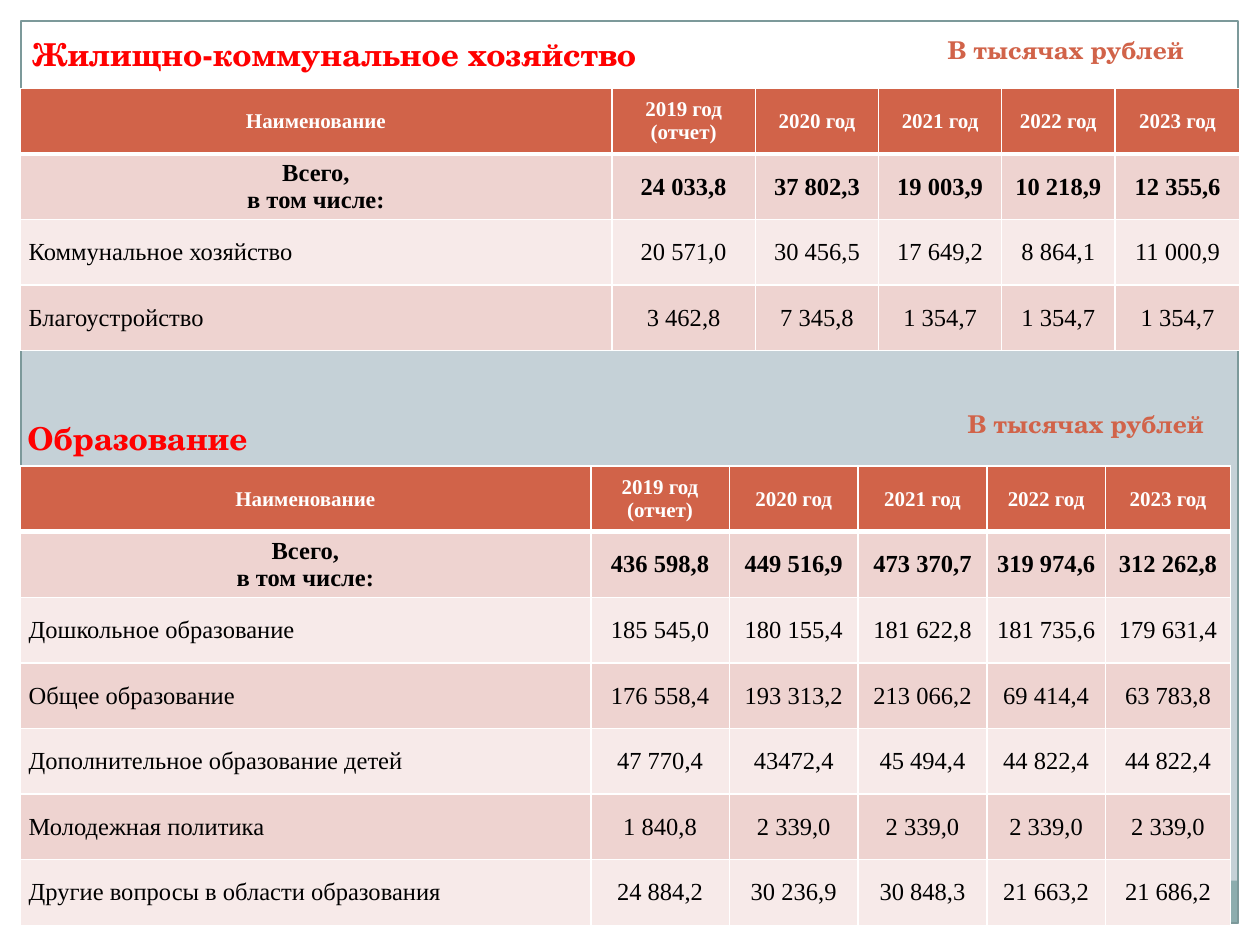
"""Builds a budget slide with housing and education spending tables."""
from pptx import Presentation
from pptx.dml.color import RGBColor
from pptx.enum import shapes, text
from pptx.oxml import parse_xml
from pptx.oxml.ns import nsdecls
from pptx.util import Pt

WHITE = RGBColor(0xFF, 0xFF, 0xFF)
BLACK = RGBColor(0, 0, 0)
RED = RGBColor(0xFF, 0, 0)
RUST = RGBColor(0xD1, 0x63, 0x49)
PINK = RGBColor(0xEE, 0xD3, 0xD0)
PALE = RGBColor(0xF7, 0xEA, 0xE9)
BACKGROUND = RGBColor(0xC5, 0xD1, 0xD7)
TEAL = RGBColor(0x8C, 0xAD, 0xAE)
FRAME = RGBColor(0x7C, 0x99, 0x9A)

SERIF = "Times New Roman"
HEADING = "TeX Gyre Schola"
ROW_HEIGHT = 37.5
HEADER = ["Наименование", "2019 год (отчет)", "2020 год", "2021 год", "2022 год", "2023 год"]
TOTAL = "Всего,\nв том числе:"

HOUSING = [
    [TOTAL, "24 033,8", "37 802,3", "19 003,9", "10 218,9", "12 355,6"],
    ["Коммунальное хозяйство", "20 571,0", "30 456,5", "17 649,2", "8 864,1", "11 000,9"],
    ["Благоустройство", "3 462,8", "7 345,8", "1 354,7", "1 354,7", "1 354,7"],
]
EDUCATION = [
    [TOTAL, "436 598,8", "449 516,9", "473 370,7", "319 974,6", "312 262,8"],
    ["Дошкольное образование", "185 545,0", "180 155,4", "181 622,8", "181 735,6", "179 631,4"],
    ["Общее образование", "176 558,4", "193 313,2", "213 066,2", "69 414,4", "63 783,8"],
    ["Дополнительное образование детей", "47 770,4", "43472,4", "45 494,4", "44 822,4", "44 822,4"],
    ["Молодежная политика", "1 840,8", "2 339,0", "2 339,0", "2 339,0", "2 339,0"],
    ["Другие вопросы в области образования", "24 884,2", "30 236,9", "30 848,3", "21 663,2", "21 686,2"],
]


def add_rect(s, box, fill=None, line=None):
    sp = s.shapes.add_shape(shapes.MSO_SHAPE.RECTANGLE, *map(Pt, box))
    sp.shadow.inherit = False
    for part, color in ((sp.fill, fill), (sp.line.fill, line)):
        if color is None:
            part.background()
        else:
            part.solid()
            part.fore_color.rgb = color
    if line is not None:
        sp.line.width = Pt(0.75)


def write(tf, content, color, align=text.PP_ALIGN.LEFT, **font):
    for i, line in enumerate(content.split("\n")):
        p = tf.add_paragraph() if i else tf.paragraphs[0]
        p.alignment = align
        r = p.add_run()
        r.text = line
        r.font.color.rgb = color
        for key, value in font.items():
            setattr(r.font, key, value)


def add_label(s, box, content, size, color, wrap):
    tf = s.shapes.add_textbox(*map(Pt, box)).text_frame
    tf.word_wrap = wrap
    write(tf, content, color, size=Pt(size), name=HEADING, bold=True)


def set_borders(cell, top, bottom):
    tc_pr = cell._tc.get_or_add_tcPr()
    for side, width in (("L", 1), ("R", 1), ("T", top), ("B", bottom)):
        tc_pr.append(parse_xml(
            f'<a:ln{side} {nsdecls("a")} w="{Pt(width)}"><a:solidFill>'
            f'<a:srgbClr val="{WHITE}"/></a:solidFill></a:ln{side}>'))


def format_cell(cell, row, col, content):
    set_borders(cell, 3 if row == 1 else 1, 3 if row == 0 else 1)
    cell.fill.solid()
    cell.fill.fore_color.rgb = RUST if row == 0 else PINK if row % 2 else PALE
    layout = {"margin_left": Pt(5), "margin_right": Pt(5), "margin_top": 0,
              "margin_bottom": 0, "vertical_anchor": text.MSO_ANCHOR.MIDDLE}
    for key, value in layout.items():
        setattr(cell, key, value)
    align = text.PP_ALIGN.JUSTIFY if row > 1 and col == 0 else text.PP_ALIGN.CENTER
    write(cell.text_frame, content, BLACK if row else WHITE, align,
          size=Pt(14 if row else 12), name=SERIF, bold=row < 2)


def add_budget_table(s, left, top, widths, body):
    rows = [HEADER] + body
    size = (sum(widths), ROW_HEIGHT * len(rows))
    table = s.shapes.add_table(len(rows), len(widths), *map(Pt, (left, top, *size))).table
    for column, width in zip(table.columns, widths):
        column.width = Pt(width)
    for i, values in enumerate(rows):
        table.rows[i].height = Pt(ROW_HEIGHT)
        for j, value in enumerate(values):
            format_cell(table.cell(i, j), i, j, value)


def add_backdrop(s):
    s.background.fill.solid()
    s.background.fill.fore_color.rgb = BACKGROUND
    for box in ((0, 528, 720, 12), (0, 0, 720, 109.5), (0, 0, 12, 540), (708, 0, 12, 540)):
        add_rect(s, box, fill=WHITE)
    add_rect(s, (11.75, 503.25, 695.5, 24.5), fill=TEAL)
    add_rect(s, (12, 12, 695.5, 515.5), line=FRAME)


def main():
    prs = Presentation()
    prs.slide_width, prs.slide_height = Pt(720), Pt(540)
    s = prs.slides.add_slide(prs.slide_layouts[6])
    add_backdrop(s)
    add_budget_table(s, 11.4, 50.5, [338.3, 82, 70.4, 70.4, 64.7, 71.6], HOUSING)
    add_budget_table(s, 11.4, 266.4, [326.2, 79.2, 73.6, 73.6, 67.7, 71.6], EDUCATION)
    add_label(s, (11.4, 16.5, 371, 29), "Жилищно-коммунальное хозяйство", 18, RED, False)
    add_label(s, (8.5, 236, 143, 29), "Образование", 18, RED, False)
    for left, top in ((545.8, 230.4), (534.4, 16.5)):
        add_label(s, (left, top, 163.5, 34), "В тысячах рублей", 14, RUST, True)
    prs.save("out.pptx")


if __name__ == "__main__":
    main()
